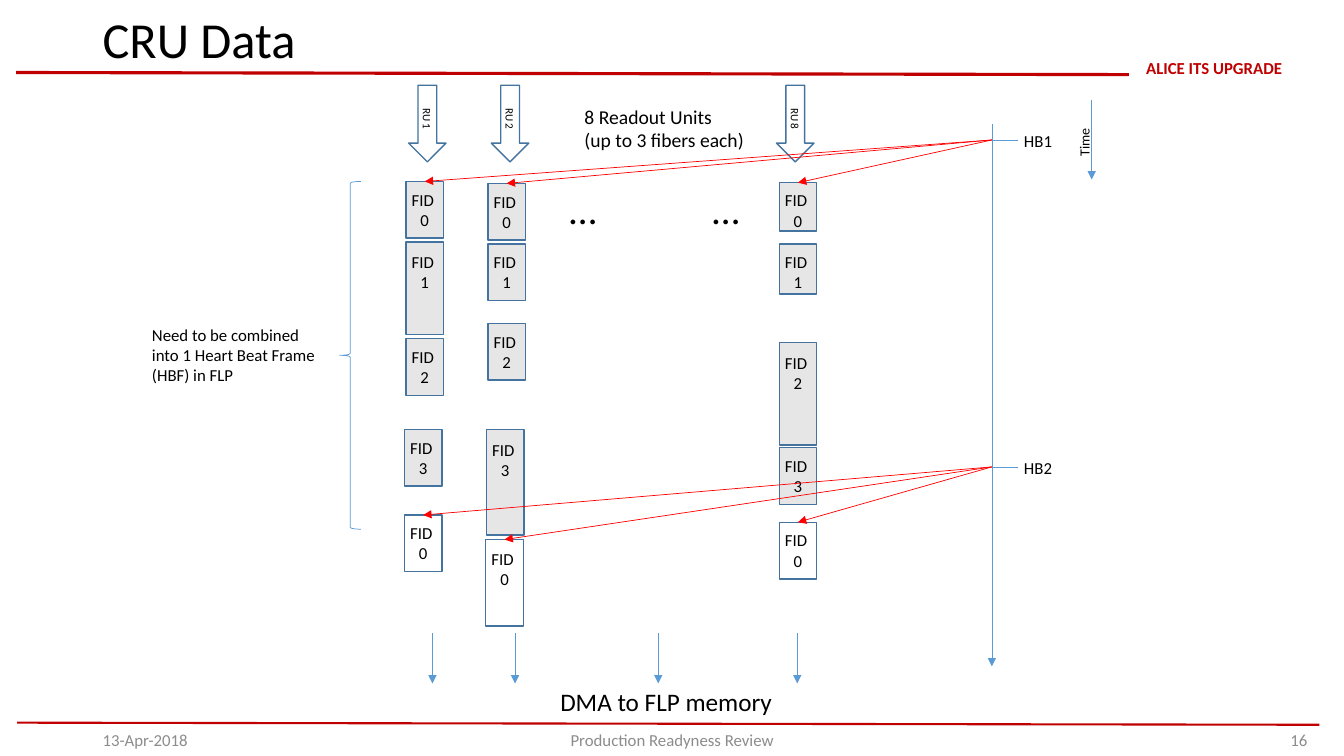
from lxml import etree
from pptx import Presentation
from pptx.dml.color import RGBColor
from pptx.enum import shapes, text
from pptx.oxml import ns
from pptx.util import Pt

HUES = dict(ink="000000", brand="C00000", foot="8C8C8C", grey="E7E6E6",
            edge="43739E", blue="5B9BD5", red="FF0000")
KIND = shapes.MSO_SHAPE
LEFT, MID, RIGHT = text.PP_ALIGN.LEFT, text.PP_ALIGN.CENTER, text.PP_ALIGN.RIGHT
TOP, HALF = text.MSO_ANCHOR.TOP, text.MSO_ANCHOR.MIDDLE


class Sketch:
    """Draws styled elements on one slide, with lengths in points."""

    def __init__(self, slide, font="Calibri"):
        self.slide = slide
        self.font = font

    def hue(self, name):
        return RGBColor.from_string(HUES[name])

    def words(self, shape, lines, size, hue="ink", align=LEFT, anchor=TOP,
              bold=False, pads=None, lead=None):
        frame = shape.text_frame
        frame.word_wrap = True
        frame.vertical_anchor = anchor
        if pads:
            sides = ("left", "top", "right", "bottom")
            for side, pad in zip(sides, pads):
                setattr(frame, "margin_" + side, Pt(pad))
        for i, line in enumerate(lines.split("\n")):
            para = frame.add_paragraph() if i else frame.paragraphs[0]
            para.alignment = align
            if lead:
                para.line_spacing = lead
            run = para.add_run()
            run.text = line
            run.font.name = self.font
            run.font.size = Pt(size)
            run.font.bold = bold
            run.font.color.rgb = self.hue(hue)

    def label(self, box, lines, size, turn=0, **style):
        shape = self.slide.shapes.add_textbox(*map(Pt, box))
        shape.rotation = turn
        self.words(shape, lines, size, **style)

    def shape(self, kind, box, fill=None, line="edge", width=1, turn=0):
        shape = self.slide.shapes.add_shape(kind, *map(Pt, box))
        shape.shadow.inherit = False
        shape.rotation = turn
        if fill:
            shape.fill.solid()
            shape.fill.fore_color.rgb = self.hue(fill)
        else:
            shape.fill.background()
        shape.line.color.rgb = self.hue(line)
        shape.line.width = Pt(width)
        return shape

    def block(self, box, num, fill):
        shape = self.shape(KIND.RECTANGLE, box, fill)
        pads = (0, 3.6 + 0.05 * box[3], 0, 0)
        self.words(shape, f"FID \n{num}", 12, align=MID, pads=pads)
        return shape

    def line(self, start, end, hue="blue", width=0.5, head=False, goal=None):
        link = self.slide.shapes.add_connector(
            shapes.MSO_CONNECTOR.STRAIGHT, *map(Pt, (*start, *end)))
        link.line.color.rgb = self.hue(hue)
        link.line.width = Pt(width)
        if head:
            pen = link._element.spPr.find(ns.qn("a:ln"))
            etree.SubElement(pen, ns.qn("a:tailEnd"), type="triangle")
        etree.SubElement(link._element.spPr, ns.qn("a:effectLst"))
        if goal is not None:
            link.end_connect(goal, 0)


def frame(art):
    art.line((11.5, 51.8), (806.4, 53.3), "brand", 2.25)
    art.line((942.5, 517.7), (12.2, 516.2), "brand", 1.5)
    art.label((815.8, 41.8, 103, 13.7), "ALICE ITS UPGRADE", 12, hue="brand",
              align=MID, anchor=HALF, bold=True, pads=(0, 0, 0, 0))
    art.label((66.2, 4.3, 740.2, 51.8), "CRU Data", 36, anchor=HALF, lead=0.9)
    for left, wide, lines, align in (
            (66.2, 216, "13-Apr-2018", LEFT),
            (318.2, 324, "Production Readyness Review", MID),
            (831.6, 109.4, "16", RIGHT)):
        art.label((left, 518, wide, 20.2), lines, 12, hue="foot",
                  align=align, anchor=HALF)


def units(art):
    wide = 26.8
    cols = (
        ("RU 1", 277.9, ((290, 129.6, 40.5), (290, 172.8, 66.2),
                         (290, 241.9, 40.5), (288.9, 306.7, 40.5),
                         (288.9, 367.9, 40.5))),
        ("RU 2", 337, ((348.5, 131, 40.5), (348.5, 174.2, 40.5),
                       (348.5, 231, 40.5), (347.5, 306.7, 75.6),
                       (347, 385.4, 61.9))),
        ("RU 8", 540.7, ((556.6, 130.5, 34.6), (556.6, 174.2, 36),
                         (556.6, 244.8, 73.2), (556.6, 319.7, 40.5),
                         (556.6, 373, 40.5))),
    )
    starts, ends = [], []
    for name, left, cells in cols:
        arrow = art.shape(KIND.RIGHT_ARROW, (left, 74.9, 54.7, 26.8), turn=90)
        art.words(arrow, name, 8, align=MID, anchor=HALF)
        row = [art.block((x, y, wide, high), i % 4, "grey" if i < 4 else None)
               for i, (x, y, high) in enumerate(cells)]
        starts.append(row[0])
        ends.append(row[-1])
    for x in (308.9, 367.9, 470.2, 569.5):
        art.line((x, 452.5), (x, 488.2), head=True)
    return starts, ends


def beats(art, starts, ends):
    axis = 708.5
    art.line((axis, 88.6), (axis, 476), head=True)
    art.line((779.8, 71.3), (779.8, 128.2), head=True)
    art.label((755.3, 90, 38.2, 19.4), "Time", 10, turn=270)
    for name, y, goals in (("HB1", 100, starts), ("HB2", 333.5, ends)):
        art.line((axis, y), (axis + 18.7, y))
        art.label((724.3, y - 10.4, 39.6, 21.6), name, 12)
        for goal in goals:
            art.line((axis, y), (goal.left.pt, goal.top.pt), "red",
                     head=True, goal=goal)


def notes(art):
    for left in (399.6, 501.8):
        art.label((left, 128.9, 28, 41), "…", 28)
    art.label((410.4, 71.3, 137.5, 41),
              "8 Readout Units\n(up to 3 fibers each)", 14)
    art.shape(KIND.LEFT_BRACE, (242.6, 129.6, 15.1, 248.4), line="blue",
              width=0.5)
    art.label((101.5, 228.2, 136.8, 51.1),
              "Need to be combined into 1 Heart Beat Frame (HBF) in FLP", 12)
    art.label((393.1, 486.7, 181.4, 28.8), "DMA to FLP memory", 18)


def main():
    deck = Presentation()
    deck.slide_width, deck.slide_height = Pt(960), Pt(540)
    art = Sketch(deck.slides.add_slide(deck.slide_layouts[6]))
    frame(art)
    beats(art, *units(art))
    notes(art)
    deck.save("out.pptx")


if __name__ == "__main__":
    main()
